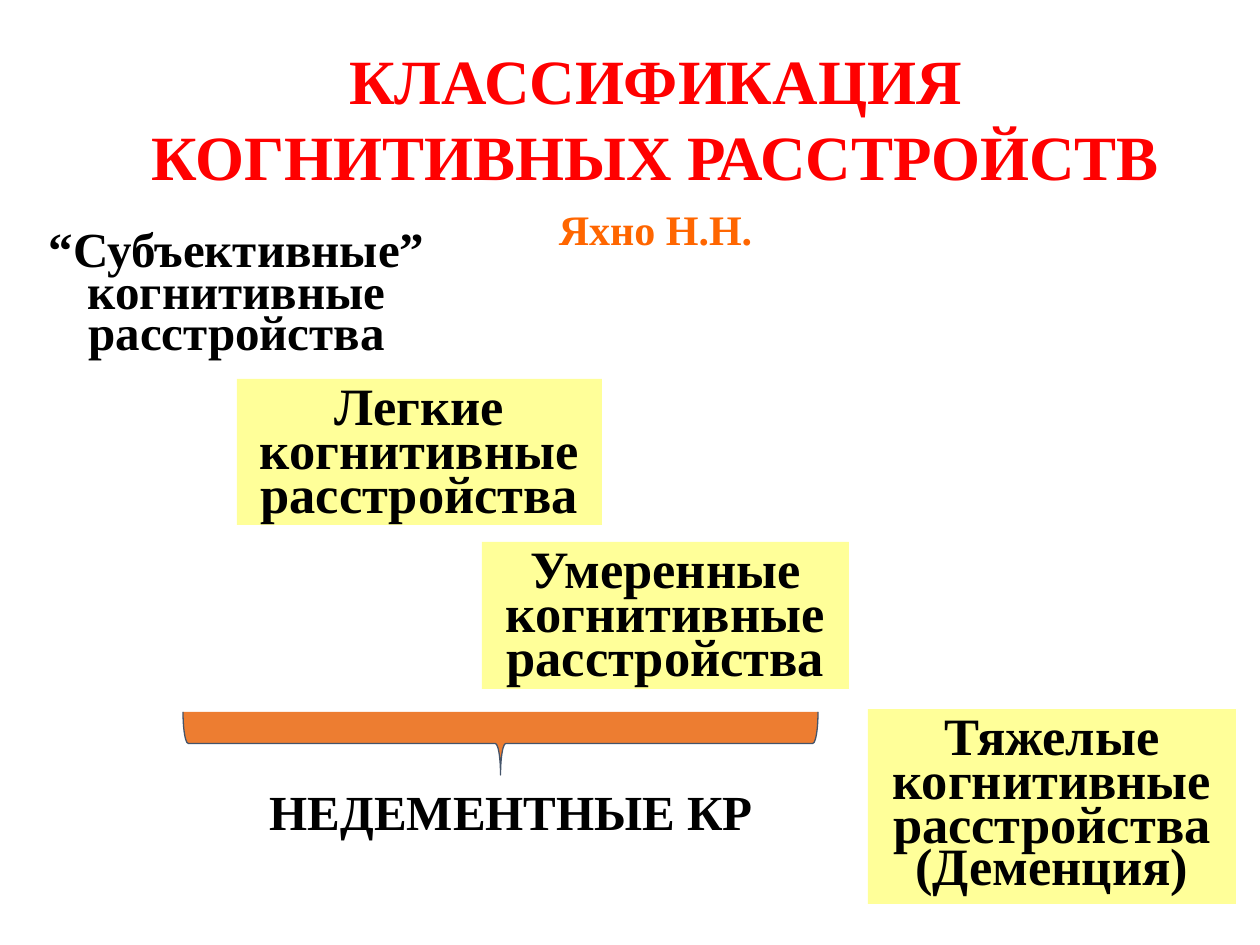
"""Builds the slide with the classification of cognitive disorders."""
from dataclasses import dataclass

from pptx import Presentation
from pptx.dml.color import RGBColor
from pptx.enum.shapes import MSO_SHAPE as Shape
from pptx.enum.text import MSO_ANCHOR as Anchor, MSO_AUTO_SIZE as AutoSize, PP_ALIGN as Align
from pptx.util import Emu, Pt


@dataclass(frozen=True)
class Theme:
    """Colours, type sizes and spacing of the slide."""
    font: str = "Times New Roman"
    title: str = "FF0000"
    author: str = "FF6600"
    ink: str = "000000"
    stage: str = "FFFF99"
    paper: str = "FFFFFF"
    brace: str = "ED7D31"
    brace_line: str = "44546A"
    title_size: int = 36
    stage_size: int = 30
    label_size: int = 28
    author_size: int = 24
    tight: float = 0.7
    tighter: float = 0.65


THEME = Theme()
DISORDERS = "когнитивные расстройства"
STAGES = [
    (("Легкие " + DISORDERS,), (237, 379, 365, 146)),
    (("Умеренные " + DISORDERS,), (482, 542, 367, 147)),
    (("Тяжелые " + DISORDERS, "(Деменция)"), (868, 709, 368, 195)),
]


def px(length):
    """Turn px into EMU."""
    return Emu(round(length * 914400 / 126))


def colour(code):
    """Turn a hex code into a colour."""
    return RGBColor.from_string(code)


def set_up_frame(box, top=6, left=12):
    """Prepare the text frame of a box."""
    frame = box.text_frame
    frame.word_wrap = True
    frame.auto_size = AutoSize.NONE
    frame.vertical_anchor = Anchor.TOP
    frame.margin_top, frame.margin_left = px(top), px(left)
    frame.margin_right, frame.margin_bottom = px(12), px(6)
    return frame


def write(para, text, size, code, align=Align.CENTER):
    """Write one bold paragraph."""
    para.text = text
    para.alignment = align
    font = para.font
    font.name, font.size, font.bold = THEME.font, Pt(size), True
    font.color.rgb = colour(code)


def add_title(page):
    """Add the heading and its author."""
    box = page.shapes.add_textbox(*map(px, (105, 26, 1101, 227)))
    frame = set_up_frame(box, top=16)
    write(frame.paragraphs[0], "КЛАССИФИКАЦИЯ КОГНИТИВНЫХ РАССТРОЙСТВ",
          THEME.title_size, THEME.title)
    author = frame.add_paragraph()
    write(author, "Яхно Н.Н.", THEME.author_size, THEME.author)
    author.space_before = Pt(6)


def add_stage(page, lines, place, size=THEME.stage_size, fill=THEME.stage):
    """Add a filled box that names one stage."""
    box = page.shapes.add_shape(Shape.RECTANGLE, *map(px, place))
    box.shadow.inherit = False
    box.fill.solid()
    box.fill.fore_color.rgb = colour(fill)
    box.line.fill.background()
    frame = set_up_frame(box, top=11)
    for index, line in enumerate(lines):
        para = frame.add_paragraph() if index else frame.paragraphs[0]
        write(para, line, size, THEME.ink)
        para.line_spacing = THEME.tighter if index else THEME.tight


def add_brace(page):
    """Add the brace below the stages without dementia."""
    brace = page.shapes.add_shape(Shape.RIGHT_BRACE, *map(px, (469, 426, 63, 635)))
    brace.rotation = 90
    brace.shadow.inherit = False
    brace.fill.solid()
    brace.fill.fore_color.rgb = colour(THEME.brace)
    brace.line.color.rgb = colour(THEME.brace_line)
    brace.line.width = Pt(0.75)


def add_brace_label(page):
    """Add the label below the brace."""
    box = page.shapes.add_textbox(*map(px, (174, 775, 617, 72)))
    frame = set_up_frame(box, left=96)
    write(frame.paragraphs[0], "НЕДЕМЕНТНЫЕ КР", THEME.label_size, THEME.ink, Align.LEFT)


def main():
    """Build and save the deck."""
    deck = Presentation()
    deck.slide_width, deck.slide_height = px(1260), px(945)
    page = deck.slides.add_slide(deck.slide_layouts[6])
    page.background.fill.solid()
    page.background.fill.fore_color.rgb = colour(THEME.paper)
    add_title(page)
    for lines, place in STAGES:
        add_stage(page, lines, place)
    add_brace(page)
    add_brace_label(page)
    add_stage(page, ("“Субъективные” " + DISORDERS,), (32, 224, 409, 137),
              THEME.label_size, THEME.paper)
    deck.save("out.pptx")


if __name__ == "__main__":
    main()
